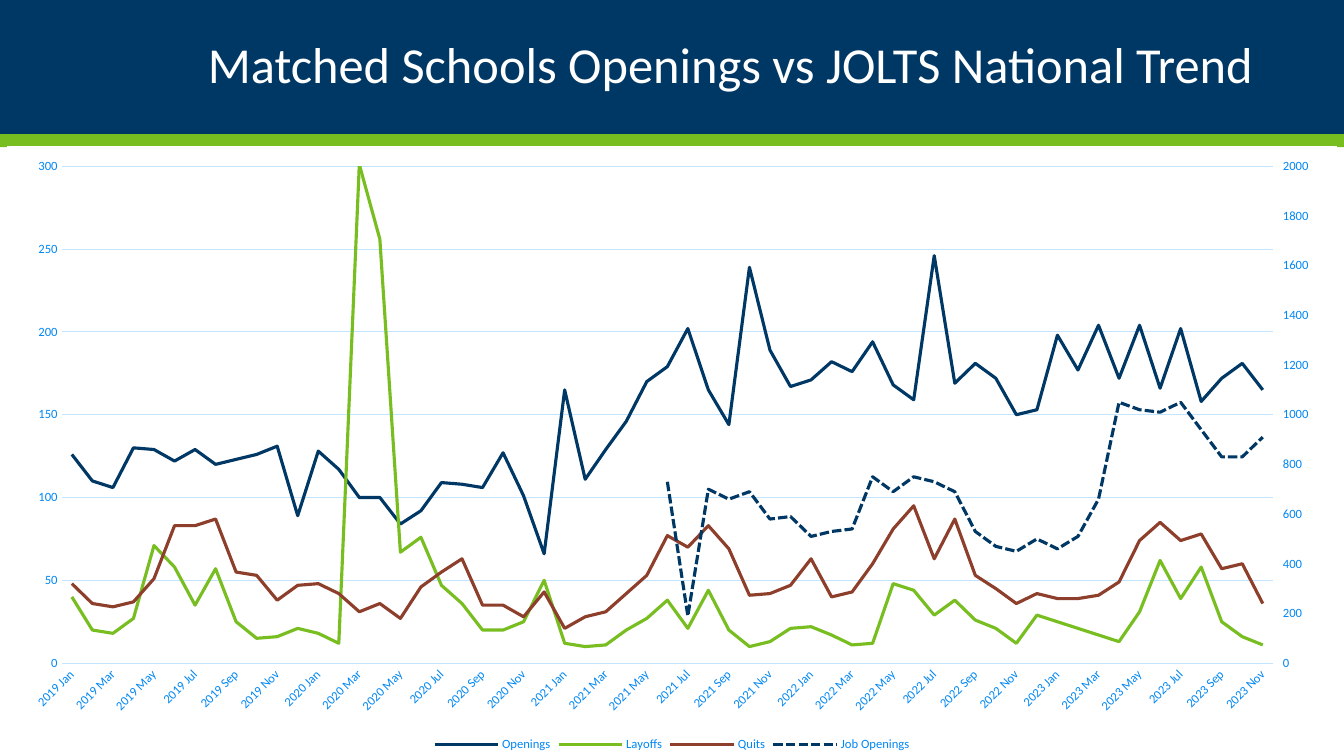
from copy import deepcopy

from lxml.etree import SubElement
from pptx import Presentation
from pptx.chart.axis import ValueAxis
from pptx.chart.data import CategoryChartData
from pptx.dml.color import RGBColor
from pptx.enum.chart import XL_CHART_TYPE as ChartType, XL_LEGEND_POSITION as LegendAt
from pptx.enum.chart import XL_MARKER_STYLE as Marker, XL_TICK_MARK as Tick
from pptx.enum.dml import MSO_LINE
from pptx.enum.shapes import MSO_SHAPE
from pptx.enum.text import MSO_ANCHOR, MSO_AUTO_SIZE, PP_ALIGN
from pptx.oxml import parse_xml
from pptx.oxml.ns import nsdecls, qn
from pptx.util import Inches, Pt

# Content
TITLE = "Matched Schools Openings vs JOLTS National Trend"
MONTH_NAMES = "Jan Feb Mar Apr May Jun Jul Aug Sep Oct Nov Dec".split()
MONTHS = [f"{year} {month}" for year in range(2019, 2024) for month in MONTH_NAMES][:-1]
NAVY, GREEN, BROWN, WHITE = "003865", "78BE21", "8D3F2B", "FFFFFF"
AXIS_TEXT, GRID = "0087F4", "C2E4FF"
FONT = "Calibri"

# Name, colour, monthly values; each row of values is one year
TRENDS = [
    ("Openings", NAVY, [
        126, 110, 106, 130, 129, 122, 129, 120, 123, 126, 131, 89,
        128, 117, 100, 100, 84, 92, 109, 108, 106, 127, 101, 66,
        165, 111, 129, 146, 170, 179, 202, 165, 144, 239, 189, 167,
        171, 182, 176, 194, 168, 159, 246, 169, 181, 172, 150, 153,
        198, 177, 204, 172, 204, 166, 202, 158, 172, 181, 165]),
    ("Layoffs", GREEN, [
        40, 20, 18, 27, 71, 58, 35, 57, 25, 15, 16, 21,
        18, 12, 301, 256, 67, 76, 47, 36, 20, 20, 25, 50,
        12, 10, 11, 20, 27, 38, 21, 44, 20, 10, 13, 21,
        22, 17, 11, 12, 48, 44, 29, 38, 26, 21, 12, 29,
        25, 21, 17, 13, 31, 62, 39, 58, 25, 16, 11]),
    ("Quits", BROWN, [
        48, 36, 34, 37, 51, 83, 83, 87, 55, 53, 38, 47,
        48, 42, 31, 36, 27, 46, 55, 63, 35, 35, 28, 43,
        21, 28, 31, 42, 53, 77, 70, 83, 69, 41, 42, 47,
        63, 40, 43, 60, 81, 95, 63, 87, 53, 45, 36, 42,
        39, 39, 41, 49, 74, 85, 74, 78, 57, 60, 36]),
    # National series starts in June 2021 and uses the right axis
    ("Job Openings", NAVY, [None] * 29 + [
        730, 190, 700, 660, 690, 580, 590,
        510, 530, 540, 750, 690, 750, 730, 690, 530, 470, 450, 500,
        460, 510, 660, 1050, 1020, 1010, 1050, 940, 830, 830, 910]),
]

# Layout in inches; plot area as shares of the chart
WIDTH, HEIGHT = 13.33, 7.5
BANNER, STRIPE = 1.33, 0.13
CHART_BOX = (0.07, 1.45, 13.19, 6.05)
PLOT = {"x": 0.041, "y": 0.033, "w": 0.911, "h": 0.815}


def rgb(value):
    return RGBColor.from_string(value)


def style_font(font, size, color):
    font.name, font.size = FONT, Pt(size)
    font.color.rgb = rgb(color)


def style_line(line, color, width):
    line.color.rgb = rgb(color)
    line.width = Pt(width)


def style_axis(axis, tick):
    axis.major_tick_mark, axis.minor_tick_mark = tick, Tick.NONE
    style_font(axis.tick_labels.font, 9, AXIS_TEXT)


prs = Presentation()
prs.slide_width, prs.slide_height = Inches(WIDTH), Inches(HEIGHT)
slide = prs.slides.add_slide(prs.slide_layouts[5])

# Banner title
title = slide.shapes.title
title.left, title.top, title.width, title.height = map(Inches, (0, 0, WIDTH, BANNER))
title.fill.solid()
title.fill.fore_color.rgb = rgb(NAVY)
frame = title.text_frame
frame.text = TITLE
frame.word_wrap, frame.auto_size = True, MSO_AUTO_SIZE.NONE
frame.vertical_anchor = MSO_ANCHOR.MIDDLE
frame.margin_left = frame.margin_right = Inches(0.9)
heading = frame.paragraphs[0]
heading.alignment, heading.line_spacing = PP_ALIGN.RIGHT, 0.9
style_font(heading.runs[0].font, 36, WHITE)

# Green stripe
stripe = slide.shapes.add_shape(
    MSO_SHAPE.RECTANGLE, *map(Inches, (0, BANNER, WIDTH, STRIPE)))
stripe.shadow.inherit = False
stripe.fill.solid()
stripe.fill.fore_color.rgb = rgb(GREEN)
stripe.line.fill.background()

# Line chart
trend_data = CategoryChartData()
trend_data.categories = MONTHS
for name, _, values in TRENDS:
    trend_data.add_series(name, values)
chart = slide.shapes.add_chart(
    ChartType.LINE, *map(Inches, CHART_BOX), trend_data).chart
chart.has_title = False
style_font(chart.font, 10, NAVY)
chart.has_legend = True
chart.legend.position = LegendAt.BOTTOM
chart.legend.include_in_layout = False
style_font(chart.legend.font, 9, AXIS_TEXT)

plot = chart.plots[0]
plot.vary_by_categories = False
for series, (_, color, _) in zip(plot.series, TRENDS):
    series.smooth = False
    series.marker.style = Marker.NONE
    style_line(series.format.line, color, 2.25)
series.format.line.dash_style = MSO_LINE.SQUARE_DOT

# Left and bottom axes
months, counts = chart.category_axis, chart.value_axis
style_axis(months, Tick.NONE)
style_line(months.format.line, GRID, 0.75)
style_axis(counts, Tick.NONE)
counts.format.line.fill.background()
counts.minimum_scale, counts.maximum_scale, counts.major_unit = 0, 300, 50
counts.has_major_gridlines = True
style_line(counts.major_gridlines.format.line, GRID, 0.75)
counts.tick_labels.number_format = "#0"
counts.tick_labels.number_format_is_linked = False

# Slanted month labels, white chart background, fixed plot area
space = chart.element
area = space.find(".//" + qn("c:plotArea"))
left_lines, month_axis, left_axis = (
    area.find(qn(tag)) for tag in ("c:lineChart", "c:catAx", "c:valAx"))
month_axis.find(".//" + qn("a:bodyPr")).set("rot", "-2700000")
space.find(qn("c:chart")).addnext(parse_xml(
    f'<c:spPr {nsdecls("c", "a")}><a:solidFill><a:srgbClr val="{WHITE}"/>'
    "</a:solidFill><a:ln><a:noFill/></a:ln></c:spPr>"))
for old_layout in area.findall(qn("c:layout")):
    area.remove(old_layout)
layout = parse_xml(f'<c:layout {nsdecls("c")}><c:manualLayout/></c:layout>')
settings = {"layoutTarget": "inner", "xMode": "edge", "yMode": "edge", **PLOT}
for key, value in settings.items():
    SubElement(layout[0], qn("c:" + key)).set("val", str(value))
area.insert(0, layout)

# Second line group with its own axes for the national series
right_lines, hidden_axis, right_axis = map(deepcopy, (left_lines, month_axis, left_axis))
left_lines.remove(left_lines.findall(qn("c:ser"))[-1])
for school_series in right_lines.findall(qn("c:ser"))[:-1]:
    right_lines.remove(school_series)
MONTH_ID, VALUE_ID = "50010", "50020"
for ref, axis_id in zip(right_lines.findall(qn("c:axId")), (MONTH_ID, VALUE_ID)):
    ref.set("val", axis_id)
for axis, own, other in ((hidden_axis, MONTH_ID, VALUE_ID),
                         (right_axis, VALUE_ID, MONTH_ID)):
    axis.find(qn("c:axId")).set("val", own)
    axis.find(qn("c:crossAx")).set("val", other)
hidden_axis.find(qn("c:delete")).set("val", "1")
right_axis.find(qn("c:axPos")).set("val", "r")
right_axis.find(qn("c:crosses")).set("val", "max")
left_lines.addnext(right_lines)
left_axis.addnext(right_axis)
right_axis.addnext(hidden_axis)

national = ValueAxis(right_axis)
national.has_major_gridlines = False
national.maximum_scale, national.major_unit = 2000, 200
national.major_tick_mark = Tick.OUTSIDE
national.tick_labels.number_format = "General"

prs.save("out.pptx")
